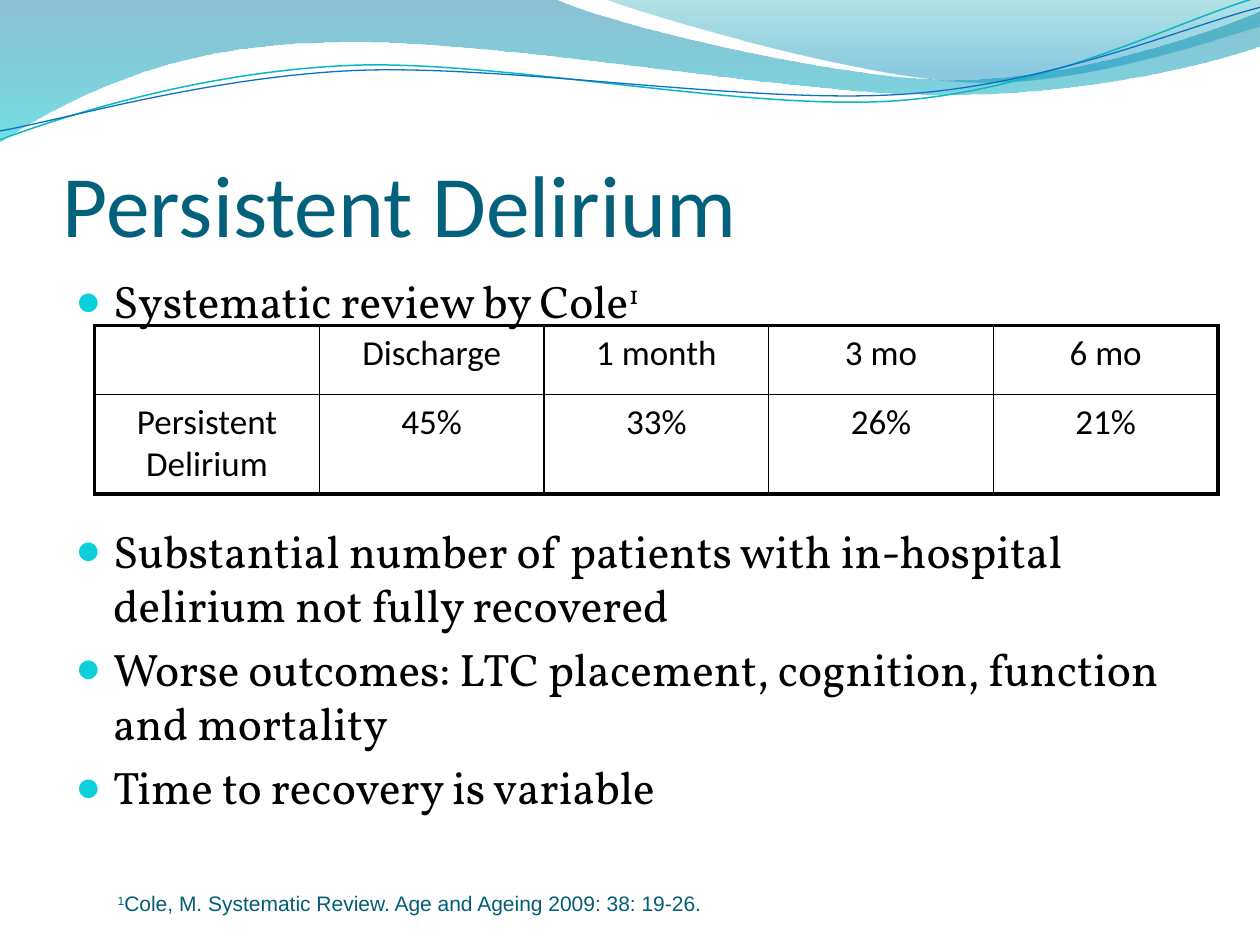
from lxml import etree
from pptx import Presentation
from pptx.dml.color import RGBColor
from pptx.enum.text import MSO_ANCHOR, PP_ALIGN
from pptx.oxml.ns import qn
from pptx.util import Cm, Pt

BOTTOM = MSO_ANCHOR.BOTTOM
CENTER = PP_ALIGN.CENTER
BLACK = RGBColor(0x00, 0x00, 0x00)
TITLE_BLUE = RGBColor(0x04, 0x61, 0x7B)
NOTE_BLUE = RGBColor(0x04, 0x5D, 0x75)
BULLET_CYAN = RGBColor(0x0B, 0xD0, 0xD9)
DEEP_BLUE = RGBColor(0x00, 0x74, 0xA1)
CYAN = RGBColor(0x00, 0xC6, 0xCF)
TEAL = RGBColor(0x00, 0xA1, 0xA9)
SKY_BLUE = RGBColor(0x00, 0x8B, 0xBF)
LINE_TEAL = RGBColor(0x0A, 0xB8, 0xBF)
LINE_BLUE = RGBColor(0x0F, 0x6F, 0xC6)

BANDS = [
    ([(0, -0.03), (11.18, -0.03), (12.09, 0.43, 16.87, 1.6, 19.25, 1.6),
      (21.67, 1.6, 24.33, 0.66, 25.4, 0.23), (25.43, 0.91),
      (24.97, 1.12, 22.1, 1.93, 18.95, 1.91), (15.8, 1.91, 9.7, 0.71, 6.53, 0.86),
      (3.28, 0.89, 1.17, 2.11, -0.03, 2.87)],
     [(0, DEEP_BLUE, 45), (1, CYAN, 55)]),
    ([(12.17, -0.03), (12.93, 0.28, 17.32, 1.57, 19.53, 1.65),
      (21.74, 1.75, 24.41, 0.81, 25.4, 0.53), (25.4, 0)],
     [(0, TEAL, 30), (0.8, SKY_BLUE, 45)]),
]
STRANDS = [
    ([(0, 2.82), (1.22, 2.36, 4.01, 1.45, 7.04, 1.32),
      (10.03, 1.19, 15.06, 2.26, 18.11, 2.03), (21.16, 1.8, 23.83, 0.38, 25.35, -0.05)],
     LINE_TEAL, 0.85),
    ([(0, 2.64), (1.19, 2.44, 4.17, 1.55, 7.19, 1.42),
      (10.24, 1.3, 15.16, 2.11, 18.21, 1.9), (21.23, 1.7, 23.9, 0.53, 25.4, 0.15)],
     LINE_BLUE, 0.75),
]
BULLETS = [
    "Substantial number of patients with in-hospital delirium not fully recovered",
    "Worse outcomes: LTC placement, cognition, function and mortality",
    "Time to recovery is variable",
]
ROWS = [
    ["", "Discharge", "1 month", "3 mo", "6 mo"],
    ["Persistent Delirium", "45%", "33%", "26%", "21%"],
]


def add_run(p, text, size=26, font="Vollkorn", color=BLACK, superscript=False):
    """Append a formatted run to a paragraph."""
    r = p.add_run()
    r.text = text
    r.font.size = Pt(size)
    r.font.name = font
    r.font.color.rgb = color
    if superscript:
        r.font._element.set("baseline", "30000")


def add_frame(slide, box, anchor=None):
    """Add a wrapping text box and return its text frame."""
    tf = slide.shapes.add_textbox(*map(Cm, box)).text_frame
    tf.word_wrap = True
    if anchor is not None:
        tf.vertical_anchor = anchor
    return tf


def add_outline(shapes, left, top, outline, close):
    """Draw lines and cubic curves relative to a corner as a freeform."""
    points = [(Cm(x), Cm(y)) for piece in outline for x, y in zip(piece[::2], piece[1::2])]
    builder = shapes.build_freeform(*points[0])
    builder.add_line_segments(points[1:], close=close)
    sp = builder.convert_to_shape(Cm(left), Cm(top))
    sp.shadow.inherit = False
    segments = iter(list(sp._element.iter(qn("a:lnTo"))))
    for piece in outline[1:]:
        segment = next(segments)
        if len(piece) == 6:
            curve = etree.Element(qn("a:cubicBezTo"))
            segment.addprevious(curve)
            for part in (segment, next(segments), next(segments)):
                curve.append(part[0])
                part.getparent().remove(part)
    return sp


def add_waves(slide, left, top):
    """Draw the translucent bands and thin strands of the header."""
    for outline, stops in BANDS:
        sp = add_outline(slide.shapes, left, top, outline, True)
        sp.line.fill.background()
        sp.fill.gradient()
        sp.fill.gradient_angle = 270
        for stop, (position, color, opacity) in zip(sp.fill.gradient_stops, stops):
            stop.position = position
            stop.color.rgb = color
            clr = stop._gs.find(qn("a:srgbClr"))
            etree.SubElement(clr, qn("a:alpha")).set("val", str(opacity * 1000))
    strands = slide.shapes.add_group_shape().shapes
    for outline, color, width in STRANDS:
        sp = add_outline(strands, left, top, outline, False)
        sp.fill.background()
        sp.line.color.rgb = color
        sp.line.width = Pt(width)


def add_title(slide, box):
    """Place the slide title at the bottom of its box."""
    tf = add_frame(slide, box, BOTTOM)
    tf.margin_left = tf.margin_right = tf.margin_bottom = 0
    add_run(tf.paragraphs[0], "Persistent Delirium", size=50, font="Calibri", color=TITLE_BLUE)


def set_bullet(p):
    """Give a paragraph a hanging round bullet."""
    pPr = p._p.get_or_add_pPr()
    pPr.set("marL", str(Cm(0.76)))
    pPr.set("indent", str(-Cm(0.76)))
    clr = etree.SubElement(pPr, qn("a:buClr"))
    etree.SubElement(clr, qn("a:srgbClr")).set("val", str(BULLET_CYAN))
    etree.SubElement(pPr, qn("a:buSzPct")).set("val", "95000")
    etree.SubElement(pPr, qn("a:buFont")).set("typeface", "Arial")
    etree.SubElement(pPr, qn("a:buChar")).set("char", "●")


def add_body(slide, box):
    """Place the bullets, leaving room for the table after the first."""
    tf = add_frame(slide, box)
    p = tf.paragraphs[0]
    set_bullet(p)
    add_run(p, "Systematic review by Cole")
    add_run(p, "1", superscript=True)
    for i, text in enumerate(BULLETS):
        p = tf.add_paragraph()
        p.space_before = Pt(5.2 if i else 111.4)
        set_bullet(p)
        add_run(p, text)


def set_borders(cell, widths):
    """Set the left, right, top and bottom borders of a cell."""
    tcPr = cell._tc.get_or_add_tcPr()
    for side, width in zip("LRTB", widths):
        ln = etree.SubElement(tcPr, qn(f"a:ln{side}"), w=str(Pt(width)))
        fill = etree.SubElement(ln, qn("a:solidFill"))
        etree.SubElement(fill, qn("a:srgbClr")).set("val", str(BLACK))


def add_rates(slide, box, heights):
    """Place the table of rates with a heavy outer border."""
    n_rows, n_cols = len(ROWS), len(ROWS[0])
    table = slide.shapes.add_table(n_rows, n_cols, *map(Cm, box)).table
    table.first_row = table.horz_banding = False
    for i, (row, height) in enumerate(zip(ROWS, heights)):
        table.rows[i].height = Cm(height)
        for j, text in enumerate(row):
            cell = table.cell(i, j)
            edges = (j == 0, j == n_cols - 1, i == 0, i == n_rows - 1)
            set_borders(cell, [2.25 if outer else 1 for outer in edges])
            cell.fill.background()
            if text:
                p = cell.text_frame.paragraphs[0]
                p.alignment = CENTER
                add_run(p, text, size=20, font="Calibri")


def add_citation(slide, box):
    """Place the source note at the foot of the slide."""
    p = add_frame(slide, box, BOTTOM).paragraphs[0]
    style = {"size": 12, "font": "Arial", "color": NOTE_BLUE}
    add_run(p, "1", superscript=True, **style)
    add_run(p, "Cole, M. Systematic Review. Age and Ageing 2009: 38: 19-26.", **style)


def main():
    """Build and save the slide."""
    prs = Presentation()
    prs.slide_width, prs.slide_height = Cm(25.4), Cm(19.05)
    s = prs.slides.add_slide(prs.slide_layouts[6])
    add_waves(s, 0, 0)
    add_title(s, (1.27, 1.97, 22.86, 3.17))
    add_body(s, (1.27, 5.38, 22.86, 12.19))
    add_citation(s, (2.12, 17.57, 16.08, 1.02))
    add_rates(s, (1.91, 6.56, 22.65, 3.4), (1.39, 2.01))
    prs.save("out.pptx")


if __name__ == "__main__":
    main()
